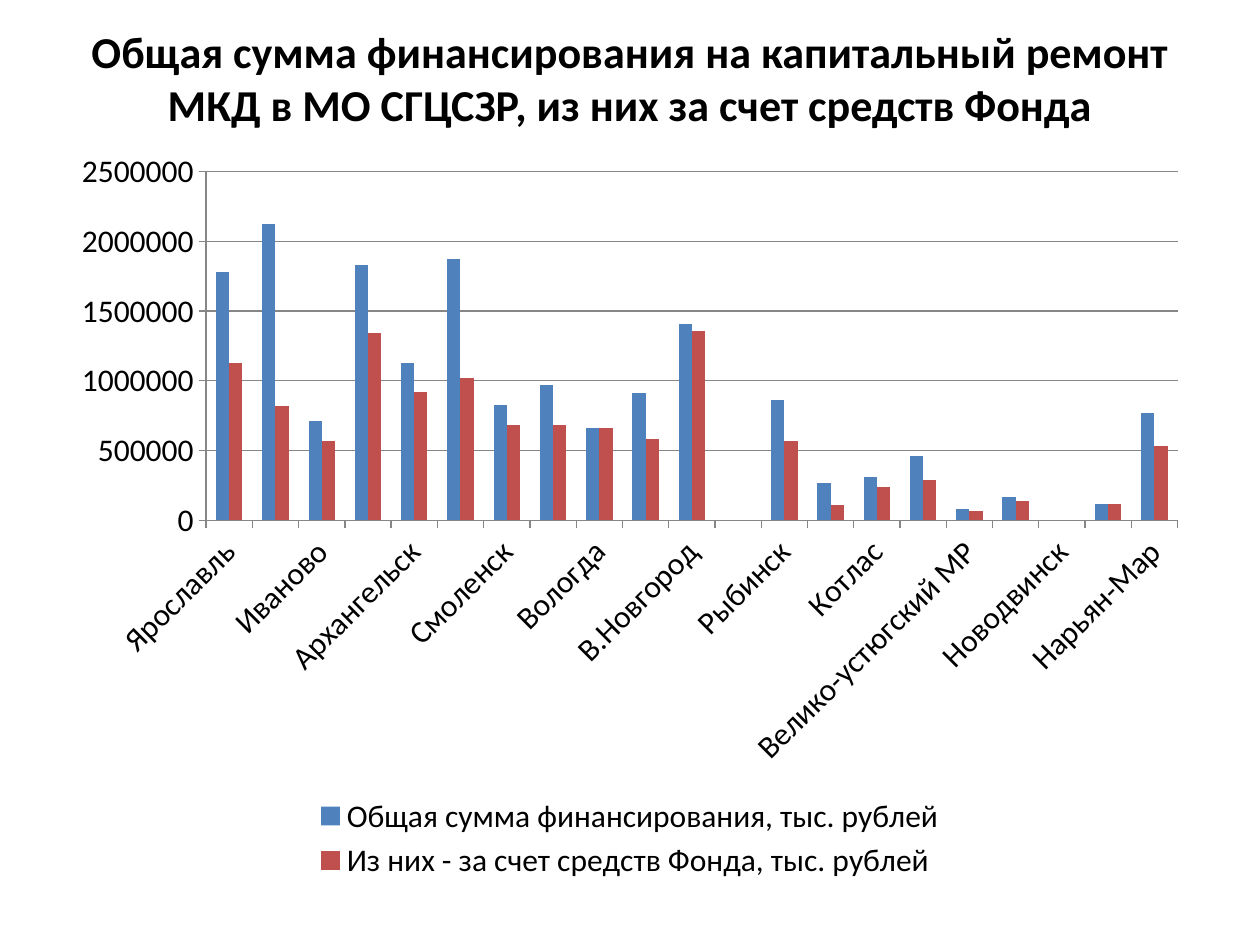
"""Build a slide comparing total and Fund financing of capital repairs by town."""
from dataclasses import dataclass

from pptx import Presentation
from pptx.chart.data import CategoryChartData
from pptx.dml.color import RGBColor
from pptx.enum.chart import XL_CHART_TYPE, XL_LEGEND_POSITION, XL_TICK_MARK
from pptx.enum.text import MSO_ANCHOR, MSO_AUTO_SIZE, PP_ALIGN
from pptx.util import Cm, Pt

CLUSTERED = XL_CHART_TYPE.COLUMN_CLUSTERED
BOTTOM = XL_LEGEND_POSITION.BOTTOM
OUTSIDE = XL_TICK_MARK.OUTSIDE
TOP = MSO_ANCHOR.TOP
NO_AUTOFIT = MSO_AUTO_SIZE.NONE
CENTER = PP_ALIGN.CENTER
FONT = "Calibri"
BLACK = "000000"
GREY = "868686"
TITLE = ("Общая сумма финансирования на капитальный ремонт "
         "МКД в МО СГЦСЗР, из них за счет средств Фонда")
TOWNS = [
    "Ярославль", "Калининград", "Иваново", "Тверь", "Архангельск", "Владимир",
    "Смоленск", "Череповец", "Вологда", "Кострома", "В.Новгород", "Псков",
    "Рыбинск", "Северодвинск", "Котлас", "Тихвинский МР", "Велико-устюгский МР",
    "Старая Русса", "Новодвинск", "Коряжма", "Нарьян-Мар",
]


@dataclass
class Funding:
    """One column series, with values in thousands of roubles."""
    name: str
    color: str
    values: list[int | None]


FUNDING = [
    Funding("Общая сумма финансирования, тыс. рублей", "4F81BD", [
        1780000, 2120000, 710000, 1830000, 1130000, 1870000, 830000,
        970000, 660000, 910000, 1410000, None, 860000, 270000,
        310000, 460000, 80000, 170000, None, 120000, 770000]),
    Funding("Из них - за счет средств Фонда, тыс. рублей", "C0504D", [
        1130000, 820000, 570000, 1340000, 920000, 1020000, 680000,
        680000, 660000, 580000, 1360000, None, 570000, 110000,
        240000, 290000, 70000, 140000, None, 120000, 530000]),
]


def rgb(value: str) -> RGBColor:
    """Turn a hex string into a colour."""
    return RGBColor.from_string(value)


def style_font(font, size: float, bold: bool = False) -> None:
    """Apply the slide's font in black."""
    font.name = FONT
    font.size = Pt(size)
    font.bold = bold
    font.color.rgb = rgb(BLACK)


def style_line(line) -> None:
    """Apply the thin grey line of the axes and grid."""
    line.color.rgb = rgb(GREY)
    line.width = Pt(0.75)


def write_title(page) -> None:
    """Place and fill the title placeholder."""
    box = page.shapes.title
    box.left, box.top, box.width, box.height = Cm(1.27), Cm(0.5), Cm(22.86), Cm(3.44)
    frame = box.text_frame
    frame.word_wrap = True
    frame.auto_size = NO_AUTOFIT
    frame.vertical_anchor = TOP
    frame.margin_top = 0
    para = frame.paragraphs[0]
    para.alignment = CENTER
    span = para.add_run()
    span.text = TITLE
    style_font(span.font, 25.2, bold=True)


def draw_chart(page, funding: list[Funding]) -> None:
    """Draw the clustered columns with their axes and legend."""
    data = CategoryChartData()
    data.categories = TOWNS
    for item in funding:
        data.add_series(item.name, item.values)
    chart = page.shapes.add_chart(
        CLUSTERED, Cm(1.19), Cm(2.77), Cm(23.01), Cm(15.09), data).chart
    style_font(chart.font, 18)
    chart.has_title = False
    chart.has_legend = True
    chart.legend.position = BOTTOM
    chart.legend.include_in_layout = False
    plot = chart.plots[0]
    plot.gap_width = 150
    plot.vary_by_categories = False
    for series, item in zip(plot.series, funding):
        series.format.fill.solid()
        series.format.fill.fore_color.rgb = rgb(item.color)
    for axis in (chart.category_axis, chart.value_axis):
        axis.major_tick_mark = OUTSIDE
        style_line(axis.format.line)
    chart.value_axis.has_major_gridlines = True
    style_line(chart.value_axis.major_gridlines.format.line)


def main() -> None:
    """Create the deck and save it."""
    deck = Presentation()
    deck.slide_width, deck.slide_height = Cm(25.4), Cm(19.05)
    page = deck.slides.add_slide(deck.slide_layouts[5])
    write_title(page)
    draw_chart(page, FUNDING)
    deck.save("out.pptx")


if __name__ == "__main__":
    main()
